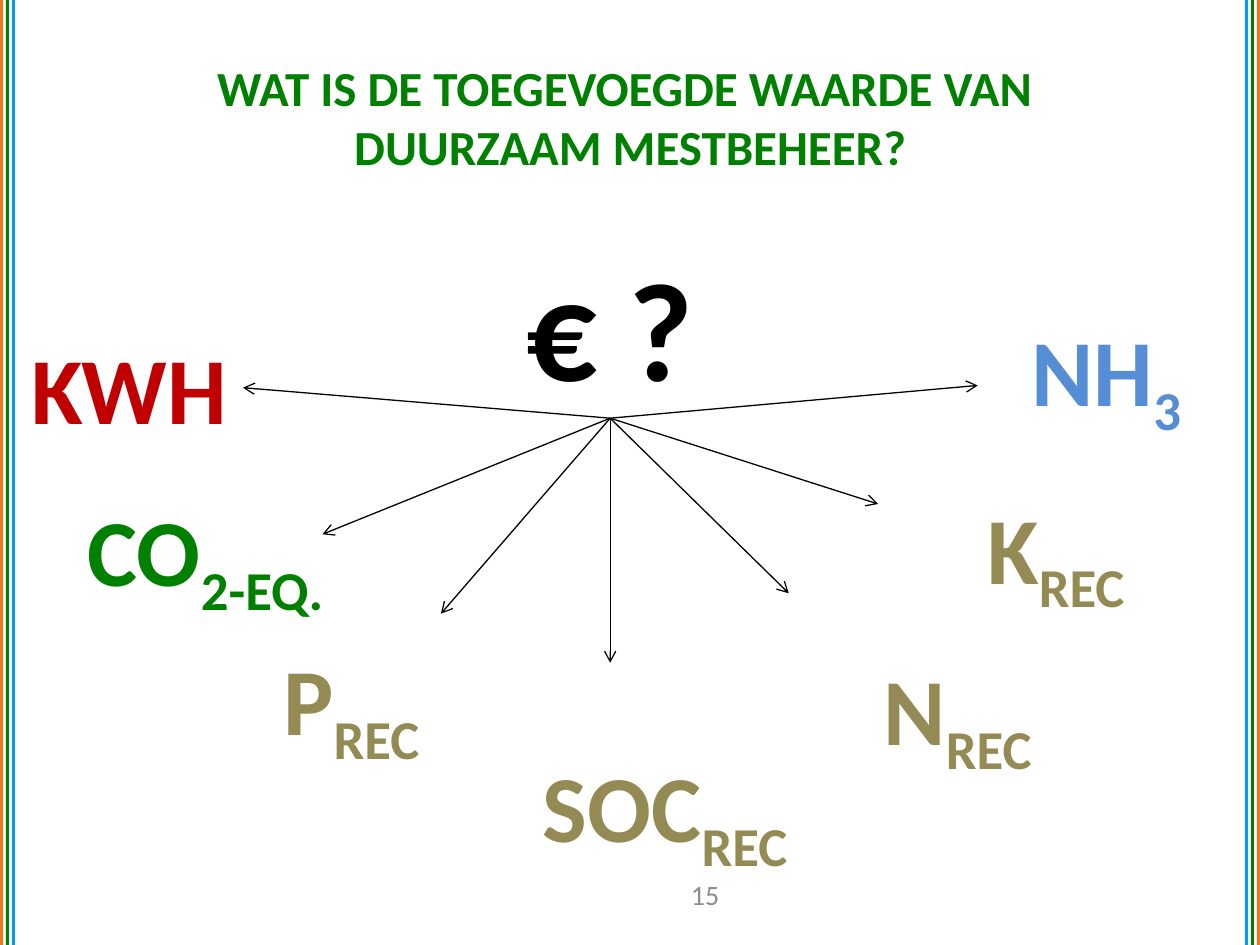
"""Build the slide on the added value of sustainable manure management."""
from lxml.etree import SubElement
from pptx import Presentation
from pptx.dml.color import RGBColor
from pptx.enum.shapes import MSO_CONNECTOR, MSO_SHAPE
from pptx.enum.text import MSO_ANCHOR, PP_ALIGN
from pptx.oxml.ns import qn
from pptx.util import Cm, Pt

WIDTH, HEIGHT = 25.4, 19.05
FONT = "Calibri"
GREEN, RED, BLUE, TAN = "008000", "C00000", "558ED5", "948A54"
BLACK, GREY = "000000", "8C8C8C"

TITLE = "WAT IS DE TOEGEVOEGDE WAARDE VAN \vDUURZAAM MESTBEHEER?"
STRIPES = ["F67616", GREEN, "0099FF"]
STRIPE_WIDTH, STRIPE_STEP = 0.06, 0.12
LABEL_HEIGHT = 2.57

# label, subscript, colour, (left, top, width), arrow tip (None: middle of the right side)
LABELS = [
    ("KWH", "", RED, (0.3, 6.53, 4.6), None),
    ("CO", "2-EQ.", GREEN, (1.3, 9.8, 5.69), (6.5, 10.77)),
    ("P", "REC", TAN, (4.29, 12.8, 5.59), (8.89, 12.37)),
    ("SOC", "REC", TAN, (10.11, 14.96, 6.6), (12.3, 13.36)),
    ("N", "REC", TAN, (16.51, 13, 5.59), (15.9, 11.96)),
    ("K", "REC", TAN, (18.49, 9.75, 5.59), (17.7, 10.16)),
    ("NH", "3", BLUE, (19.51, 6.17, 5.59), (19.71, 7.77)),
]


def color(hex_code):
    return RGBColor.from_string(hex_code)


def style(para, size, hex_code, bold=True):
    para.alignment = PP_ALIGN.CENTER
    para.font.name = FONT
    para.font.size = Pt(size)
    para.font.bold = bold
    para.font.color.rgb = color(hex_code)


def add_stripe(page, left, hex_code):
    stripe = page.shapes.add_shape(
        MSO_SHAPE.RECTANGLE, Cm(left), 0, Cm(STRIPE_WIDTH), Cm(HEIGHT))
    stripe.shadow.inherit = False
    stripe.fill.solid()
    stripe.fill.fore_color.rgb = color(hex_code)
    stripe.line.fill.background()


def add_text(page, place, text, size, hex_code, subscript="", bold=True):
    box = page.shapes.add_textbox(*map(Cm, place))
    box.text_frame.word_wrap = True
    para = box.text_frame.paragraphs[0]
    para.add_run().text = text
    if subscript:
        span = para.add_run()
        span.text = subscript
        span._r.get_or_add_rPr().set("baseline", "-25000")
    style(para, size, hex_code, bold)
    return box


def add_arrow(page, source, label, tip):
    end = map(Cm, tip or (0, 0))
    arrow = page.shapes.add_connector(MSO_CONNECTOR.STRAIGHT, 0, 0, *end)
    arrow.begin_connect(source, 2)
    if tip is None:
        arrow.end_connect(label, 3)
    arrow.line.color.rgb = color(BLACK)
    arrow.line.width = Pt(0.75)
    properties = arrow._element.spPr
    SubElement(properties.find(qn("a:ln")), qn("a:tailEnd"), type="arrow")
    SubElement(properties, qn("a:effectLst"))


def main():
    deck = Presentation()
    deck.slide_width, deck.slide_height = Cm(WIDTH), Cm(HEIGHT)
    page = deck.slides.add_slide(deck.slide_layouts[5])

    for index, hex_code in enumerate(STRIPES):
        offset = index * STRIPE_STEP
        add_stripe(page, offset, hex_code)
        add_stripe(page, WIDTH - STRIPE_WIDTH - offset, hex_code)

    title = page.shapes.title
    title.left, title.top, title.width, title.height = map(Cm, (1.27, 0.76, 22.86, 3.18))
    title.text_frame.text = TITLE
    title.text_frame.vertical_anchor = MSO_ANCHOR.MIDDLE
    style(title.text_frame.paragraphs[0], 28, GREEN)

    number = add_text(page, (13.11, 17.53, 2.21, 1.01), "15", 16, GREY, bold=False)
    number.text_frame.vertical_anchor = MSO_ANCHOR.MIDDLE

    euro = add_text(page, (9.3, 4.75, 6, 3.68), "€ ?", 80, BLACK)
    for text, subscript, hex_code, place, tip in LABELS:
        label = add_text(page, (*place, LABEL_HEIGHT), text, 54, hex_code, subscript)
        add_arrow(page, euro, label, tip)

    deck.save("out.pptx")


if __name__ == "__main__":
    main()
